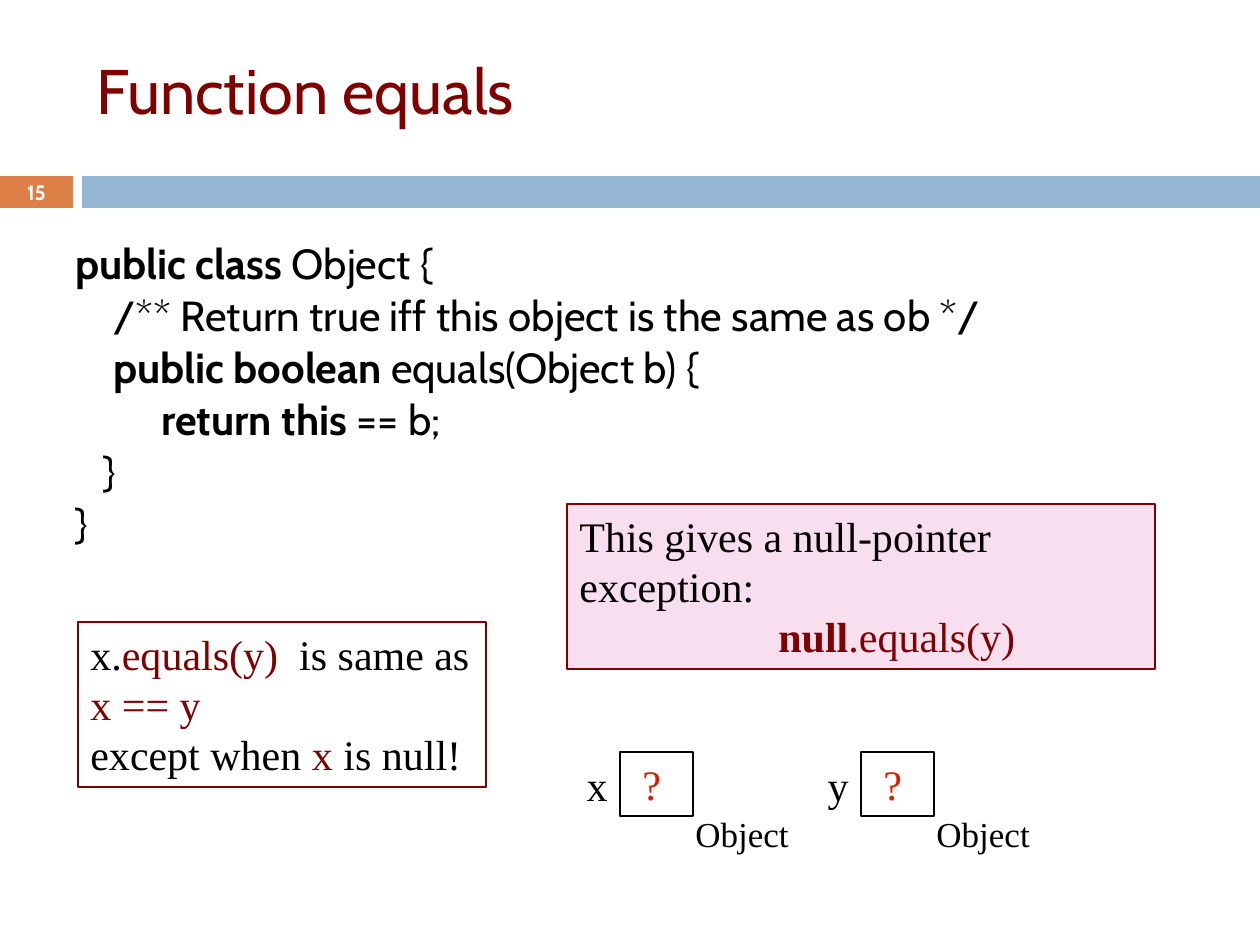
import pptx
import pptx.dml.color
import pptx.enum.shapes
import pptx.enum.text
import pptx.util

RGB = pptx.dml.color.RGBColor
ALIGN = pptx.enum.text.PP_ALIGN
ANCHOR = pptx.enum.text.MSO_ANCHOR

BLACK = RGB(0x00, 0x00, 0x00)
WHITE = RGB(0xFF, 0xFF, 0xFF)
MAROON = RGB(0x80, 0x00, 0x00)
RED = RGB(0xE4, 0x19, 0x00)
ORANGE = RGB(0xDD, 0x80, 0x47)
BLUE = RGB(0x94, 0xB6, 0xD2)
PINK = RGB(0xF8, 0xDF, 0xF0)

SANS = "Cabin"
SERIF = "Times New Roman"
PX_PER_INCH = 126

# Each line: indent in px, then runs of (text, bold)
CODE = [
    (0, [("public class ", True), ("Object {", False)]),
    (38, [("/** Return true iff this object is the same as ob */", False)]),
    (38, [("public boolean", True), (" equals(Object b) {", False)]),
    (86, [("return this", True), (" == b;", False)]),
    (28, [("}", False)]),
    (0, [("}", False)]),
]


def px(length):
    return pptx.util.Emu(round(length * 914400 / PX_PER_INCH))


def apply(target, values):
    for name, value in values.items():
        setattr(target, name, value)


def write(frame, lines, font=SERIF, size=24, align=ALIGN.LEFT, before=0,
          anchor=ANCHOR.TOP, wrap=True):
    """Fill a frame with lines of (indent, [(text, colour, bold), ...])."""
    apply(frame, {"word_wrap": wrap, "vertical_anchor": anchor,
                  "auto_size": pptx.enum.text.MSO_AUTO_SIZE.NONE})
    for number, (indent, runs) in enumerate(lines):
        paragraph = frame.add_paragraph() if number else frame.paragraphs[0]
        apply(paragraph, {"alignment": align,
                          "space_before": pptx.util.Pt(before)})
        if indent:
            properties = paragraph._p.get_or_add_pPr()
            properties.set("marL", str(px(indent)))
            properties.set("indent", "0")
        for text, colour, bold in runs:
            run = paragraph.add_run()
            run.text = text
            apply(run.font, {"name": font, "size": pptx.util.Pt(size),
                             "bold": bold})
            run.font.color.rgb = colour


def add_box(slide, bounds, fill=None, line=None):
    box = slide.shapes.add_shape(pptx.enum.shapes.MSO_SHAPE.RECTANGLE,
                                 *map(px, bounds))
    box.shadow.inherit = False
    if fill is None:
        box.fill.background()
    else:
        box.fill.solid()
        box.fill.fore_color.rgb = fill
    if line is None:
        box.line.fill.background()
    else:
        box.line.color.rgb = line
        box.line.width = pptx.util.Pt(0.75)
    return box.text_frame


def add_text(slide, bounds, lines, **style):
    label = slide.shapes.add_textbox(*map(px, bounds))
    write(label.text_frame, lines, **style)


def add_title(slide, text):
    title = slide.shapes.title
    for name, length in zip(("left", "top", "width", "height"),
                            (84, 21, 1124, 136)):
        setattr(title, name, px(length))
    write(title.text_frame, [(0, [(text, MAROON, False)])],
          font=SANS, size=36, anchor=ANCHOR.MIDDLE)


def add_band(slide, number):
    add_box(slide, (0, 176, 73, 32), fill=ORANGE)
    add_box(slide, (82, 176, 1178, 32), fill=BLUE)
    add_text(slide, (0, 175, 73, 34), [(0, [(number, WHITE, True)])],
             font=SANS, size=11.9, align=ALIGN.CENTER, anchor=ANCHOR.MIDDLE)


def add_variable(slide, name, left):
    """Draw a variable: its name, the box for its value, and its type."""
    add_text(slide, (left - 60, 753, 60, 63), [(0, [(name, BLACK, False)])],
             align=ALIGN.RIGHT)
    value = add_box(slide, (left, 752, 73, 64), line=BLACK)
    write(value, [(10, [("?", RED, False)])])
    add_text(slide, (left + 63, 806, 126, 55),
             [(0, [("Object", BLACK, False)])], size=20)


def main():
    deck = pptx.Presentation()
    apply(deck, {"slide_width": px(1260), "slide_height": px(945)})
    slide = deck.slides.add_slide(deck.slide_layouts[5])

    add_band(slide, "15")
    add_title(slide, "Function equals")
    code_lines = [(indent, [(text, BLACK, bold) for text, bold in runs])
                  for indent, runs in CODE]
    add_text(slide, (63, 231, 1124, 357), code_lines, font=SANS, before=1)

    equivalence = add_box(slide, (78, 622, 408, 165), line=MAROON)
    write(equivalence, [
        (0, [("x.", BLACK, False), ("equals(y)  ", MAROON, False),
             ("is same as", BLACK, False)]),
        (0, [("x == y", MAROON, False)]),
        (0, [("except when ", BLACK, False), ("x", MAROON, False),
             (" is null!", BLACK, False)]),
    ], wrap=False)

    for name, left in (("x", 620), ("y", 861)):
        add_variable(slide, name, left)

    warning = add_box(slide, (567, 504, 588, 165), fill=PINK, line=MAROON)
    write(warning, [
        (0, [("This gives a null-pointer exception:", BLACK, False)]),
        (199, [("null", MAROON, True), (".equals(y)", MAROON, False)]),
    ])
    deck.save("out.pptx")


if __name__ == "__main__":
    main()
